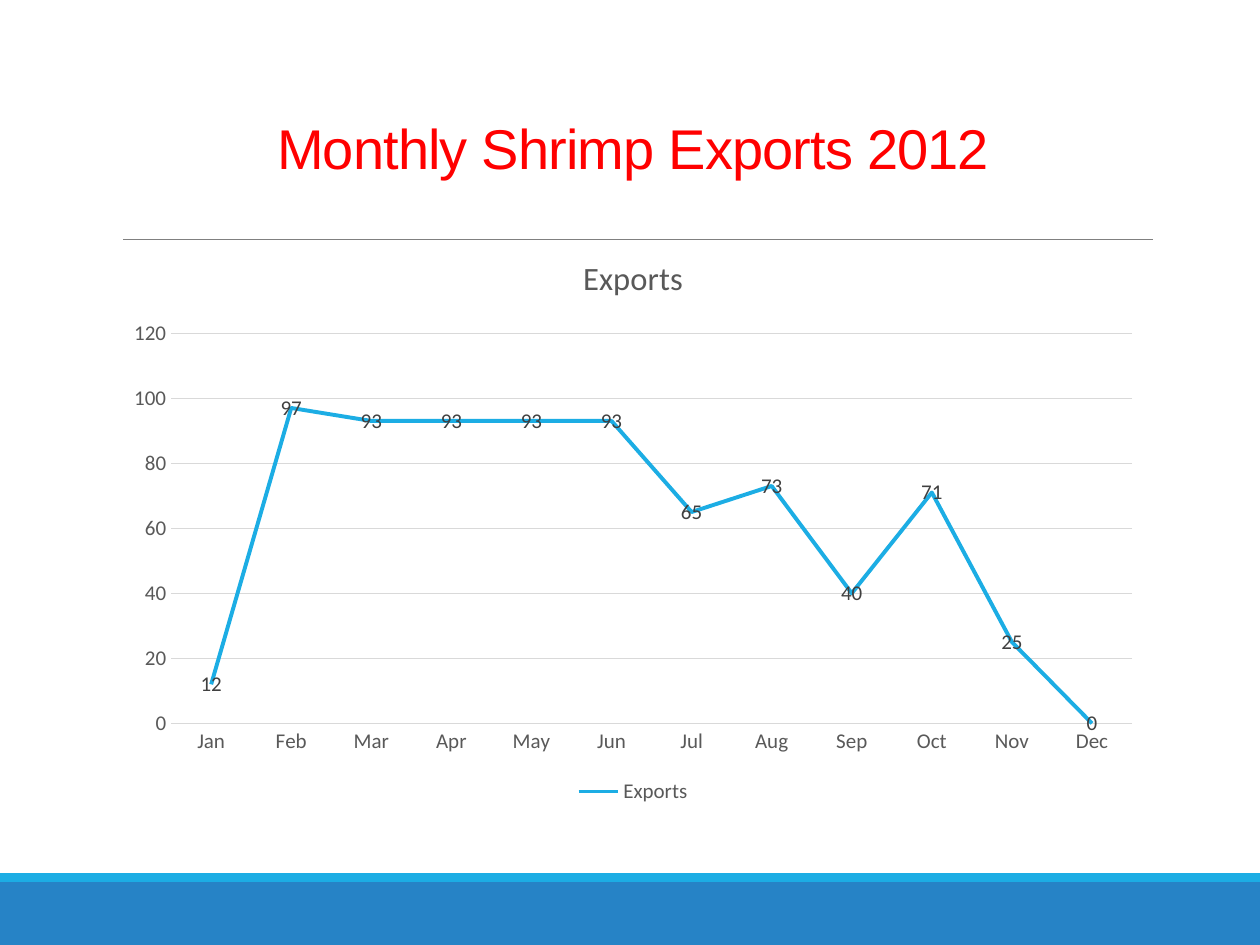
from pptx import Presentation
from pptx.chart.data import CategoryChartData
from pptx.dml.color import RGBColor
from pptx.enum.chart import (XL_CHART_TYPE, XL_LABEL_POSITION, XL_LEGEND_POSITION,
                             XL_MARKER_STYLE, XL_TICK_MARK)
from pptx.enum.shapes import MSO_CONNECTOR, MSO_SHAPE
from pptx.enum.text import MSO_ANCHOR, PP_ALIGN
from pptx.oxml.ns import qn
from pptx.util import Pt

WIDTH, HEIGHT = 720, 540
TITLE = "Monthly Shrimp Exports 2012"
SERIES_NAME = "Exports"
MONTHLY_EXPORTS = {
    "Jan": 12, "Feb": 97, "Mar": 93, "Apr": 93, "May": 93, "Jun": 93,
    "Jul": 65, "Aug": 73, "Sep": 40, "Oct": 71, "Nov": 25, "Dec": 0,
}
FOOTER_BANDS = [(504, 36, "2683C6"), (499, 5, "1CADE4")]  # top, height, colour
LEFT, CONTENT_WIDTH = 64.8, 594
ACCENT, GRAY, DARK_GRAY, GRID = "1CADE4", "595959", "404040", "D9D9D9"


def color(value):
    return RGBColor.from_string(value)


def set_attributes(target, values):
    for name, value in values.items():
        setattr(target, name, value)


def format_font(font, size, value, name="Calibri"):
    set_attributes(font, {"size": Pt(size), "name": name, "bold": False})
    font.color.rgb = color(value)


def format_line(line, width, value):
    line.width = Pt(width)
    line.color.rgb = color(value)


def add_footer(slide):
    for top, height, fill in FOOTER_BANDS:
        band = slide.shapes.add_shape(
            MSO_SHAPE.RECTANGLE, 0, Pt(top), Pt(WIDTH), Pt(height))
        band.shadow.inherit = False
        band.fill.solid()
        band.fill.fore_color.rgb = color(fill)
        band.line.fill.background()


def add_title(slide):
    rule = slide.shapes.add_connector(
        MSO_CONNECTOR.STRAIGHT, Pt(70.5), Pt(136.8), Pt(658.8), Pt(136.8))
    format_line(rule.line, 0.5, "808080")
    rule._element.spPr.append(rule._element.spPr.makeelement(qn("a:effectLst"), {}))

    box = slide.shapes.add_textbox(Pt(LEFT), Pt(22.3), Pt(CONTENT_WIDTH), Pt(123.1))
    set_attributes(box.text_frame, {
        "word_wrap": True, "vertical_anchor": MSO_ANCHOR.BOTTOM, "margin_bottom": Pt(42)})
    paragraph = box.text_frame.paragraphs[0]
    set_attributes(paragraph, {"alignment": PP_ALIGN.CENTER, "line_spacing": 0.85})
    run = paragraph.add_run()
    run.text = TITLE
    format_font(run.font, 32, "FF0000", "Arial")
    run._r.get_or_add_rPr().set("spc", "-50")


def add_exports_chart(slide):
    data = CategoryChartData()
    data.categories = list(MONTHLY_EXPORTS)
    data.add_series(SERIES_NAME, list(MONTHLY_EXPORTS.values()))
    chart = slide.shapes.add_chart(
        XL_CHART_TYPE.LINE, Pt(LEFT), Pt(131.8), Pt(CONTENT_WIDTH), Pt(330.5), data).chart
    format_font(chart.font, 10, "000000")

    chart.has_title = True
    title_run = chart.chart_title.text_frame.paragraphs[0].add_run()
    title_run.text = SERIES_NAME
    format_font(title_run.font, 18.6, GRAY)

    chart.has_legend = True
    set_attributes(chart.legend, {
        "position": XL_LEGEND_POSITION.BOTTOM, "include_in_layout": False})
    format_font(chart.legend.font, 12, GRAY)

    for axis in (chart.category_axis, chart.value_axis):
        set_attributes(axis, {"major_tick_mark": XL_TICK_MARK.NONE,
                              "minor_tick_mark": XL_TICK_MARK.NONE})
        format_font(axis.tick_labels.font, 12, GRAY)
    format_line(chart.category_axis.format.line, 0.75, GRID)
    chart.value_axis.format.line.fill.background()
    format_line(chart.value_axis.major_gridlines.format.line, 0.75, GRID)

    plot = chart.plots[0]
    plot.vary_by_categories = False
    series = plot.series[0]
    series.smooth = False
    series.marker.style = XL_MARKER_STYLE.NONE
    format_line(series.format.line, 2.25, ACCENT)
    labels = series.data_labels
    set_attributes(labels, {"show_value": True, "position": XL_LABEL_POSITION.CENTER})
    format_font(labels.font, 12, DARK_GRAY)


def main():
    presentation = Presentation()
    set_attributes(presentation, {"slide_width": Pt(WIDTH), "slide_height": Pt(HEIGHT)})
    slide = presentation.slides.add_slide(presentation.slide_layouts[6])
    add_footer(slide)
    add_title(slide)
    add_exports_chart(slide)
    presentation.save("out.pptx")


if __name__ == "__main__":
    main()
